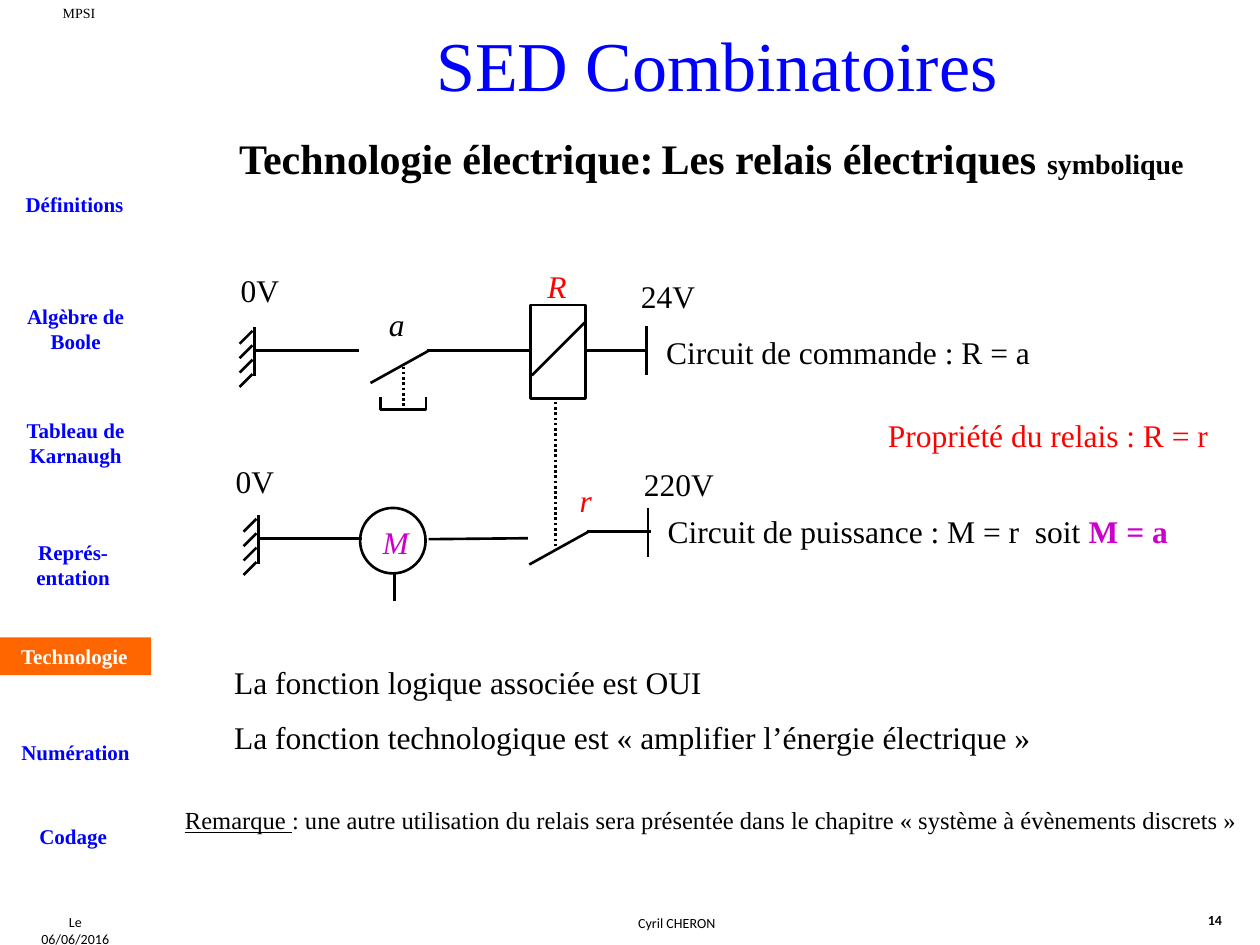
from lxml import etree
from pptx import Presentation
from pptx.dml.color import RGBColor
from pptx.enum.dml import MSO_LINE
from pptx.enum.shapes import MSO_CONNECTOR, MSO_SHAPE
from pptx.enum.text import PP_ALIGN
from pptx.oxml.ns import qn
from pptx.util import Cm, Pt

LEFT, MID = PP_ALIGN.LEFT, PP_ALIGN.CENTER
DOT = MSO_LINE.ROUND_DOT
BLACK = RGBColor(0x00, 0x00, 0x00)
WHITE = RGBColor(0xFF, 0xFF, 0xFF)
BLUE = RGBColor(0x00, 0x00, 0xFF)
RED = RGBColor(0xFF, 0x00, 0x00)
ORANGE = RGBColor(0xFF, 0x66, 0x00)
PURPLE = RGBColor(0xCC, 0x00, 0xCC)
SERIF, SANS = "Times New Roman", "Calibri"
WIDE, TIGHT, NONE = (0.25, 0.13), (0.1, 0.13), (0, 0)

# All places are in cm: left, top, width, height
FOOT = [
    ("Le 06/06/2016", (0.43, 18.29, 2.18, 0.61), False),
    ("Cyril CHERON", (3.18, 18.31, 20.93, 0.61), False),
    ("14", (24, 18.24, 0.99, 0.61), True),
]
MENU = [
    ("Définitions", 0.03, 3.73, 0.76),
    ("Algèbre de Boole", 0.05, 5.99, 1.27),
    ("Tableau de Karnaugh", 0.05, 8.28, 1.27),
    ("Représ-entation", 0, 10.74, 1.27),
    ("Numération", 0.05, 14.78, 0.76),
    ("Codage", 0, 16.48, 0.76),
]
HEAD = [
    ("Technologie électrique:", {}),
    (" ", {"size": Pt(18), "bold": False}),
    ("Les relais électriques ", {}),
    ("symbolique", {"size": Pt(16)}),
]
POWER = [
    ("Circuit de puissance : M = r  soit ", {}),
    ("M = a", {"bold": True, "color": PURPLE}),
]
NOTE = [
    ("Remarque ", {"underline": True}),
    (": une autre utilisation du relais sera présentée dans le chapitre "
     "« système à évènements discrets »", {}),
]
ROLES = [
    "La fonction logique associée est OUI",
    "La fonction technologique est « amplifier l’énergie électrique »",
]
VOLTS = [
    ("0V", (4.6, 5.33, 1.73, 0.97)),
    ("24V", (12.67, 5.46, 1.98, 0.97)),
    ("0V", (4.5, 9.19, 1.73, 0.97)),
    ("220V", (12.73, 9.25, 2.29, 0.97)),
]
SIGNS = [
    ("a", (7.44, 6.15, 1.12, 0.86), BLACK),
    ("R", (10.67, 5.38, 1.12, 0.86), RED),
    ("r", (11.25, 9.7, 1.12, 0.86), RED),
    ("M", (7.47, 10.54, 1.02, 0.69), PURPLE),
]
FACTS = [
    ("Circuit de commande : R = a", (13.18, 6.58, 7.85, 1.02), BLACK),
    (POWER, (13.21, 10.19, 10.59, 1.02), BLACK),
    ("Propriété du relais : R = r", (17.65, 8.26, 6.96, 1.02), RED),
]
COIL = (10.69, 6.15, 1.12, 1.88)
MOTOR = (7.26, 10.24, 1.32, 1.32)
BUTTON = [(7.67, 8), (7.67, 8.26), (8.59, 8.26), (8.59, 8)]
GROUNDS = [(5.13, 6.6), (5.21, 10.39)]
SWITCHES = [(8.66, 7.06), (11.86, 10.72)]
BARS = [(13.03, 6.58), (13.06, 10.24)]
WIRES = [
    (5.16, 7.06, 7.24, 7.06),
    (8.61, 7.06, 10.72, 7.06),
    (11.84, 7.06, 13, 7.06),
    (10.72, 7.57, 11.79, 6.5),
    (5.21, 10.85, 7.29, 10.85),
    (8.64, 10.87, 10.64, 10.85),
    (11.84, 10.72, 13.13, 10.72),
    (7.95, 11.58, 7.95, 12.12),
]
LINKS = [(8.13, 7.39, 8.13, 8.28), (11.2, 8.1, 11.2, 11.05)]
BAR = 0.98

deck = Presentation()
deck.slide_width, deck.slide_height = Cm(25.4), Cm(19.05)
slide = deck.slides.add_slide(deck.slide_layouts[6])
shapes = slide.shapes


def write(shape, paras, size, color=BLACK, align=LEFT, bold=False,
          italic=False, face=SERIF, inset=WIDE, gap=0, wrap=True):
    """Fill a shape; each paragraph is a string or a list of (text, style)."""
    frame = shape.text_frame
    frame.word_wrap = wrap
    frame.margin_left = frame.margin_right = Cm(inset[0])
    frame.margin_top = frame.margin_bottom = Cm(inset[1])
    for i, para in enumerate(paras):
        p = frame.add_paragraph() if i else frame.paragraphs[0]
        p.alignment = align
        if i and gap:
            p.space_before = Pt(gap)
        p.font.size, p.font.name = Pt(size), face
        p.font.bold, p.font.italic = bold, italic
        p.font.color.rgb = color
        for text, style in [(para, {})] if isinstance(para, str) else para:
            run = p.add_run()
            run.text = text
            for key, value in style.items():
                if key == "color":
                    run.font.color.rgb = value
                else:
                    setattr(run.font, key, value)


def label(para, place, size, **style):
    box = shapes.add_textbox(*map(Cm, place))
    write(box, [para], size, **style)


def ink(item):
    item.line.color.rgb = BLACK
    item.line.width = Pt(1.5)


def wire(x1, y1, x2, y2, dash=None):
    line = shapes.add_connector(MSO_CONNECTOR.STRAIGHT,
                                *map(Cm, (x1, y1, x2, y2)))
    ink(line)
    if dash:
        line.line.dash_style = dash
    etree.SubElement(line._element.spPr, qn("a:effectLst"))


def solid(kind, place, fill=None):
    shape = shapes.add_shape(kind, *map(Cm, place))
    shape.shadow.inherit = False
    if fill is None:
        shape.fill.background()
    else:
        shape.fill.solid()
        shape.fill.fore_color.rgb = fill
    return shape


# Frame of the page
for text, place, bold in FOOT:
    label(text, place, 8, face=SANS, bold=bold, align=MID, wrap=False)
label("MPSI", (0.81, 0.1, 1.57, 0.33), 8, align=MID, inset=NONE)
for text, x, y, h in MENU:
    label(text, (x, y, 2.95, h), 12, color=BLUE, bold=True, align=MID,
          inset=TIGHT)
tab = solid(MSO_SHAPE.RECTANGLE, (-0.05, 12.85, 3.1, 0.76), ORANGE)
tab.line.fill.background()
write(tab, ["Technologie"], 12, color=WHITE, bold=True, align=MID)
label("SED Combinatoires", (6.17, 0.3, 16.56, 1.96), 40, color=BLUE, align=MID)
label(HEAD, (3.53, 2.54, 21.62, 1.27), 24, bold=True, align=MID)

# Both circuits
for x, y in GROUNDS:
    wire(x, y, x, y + BAR)
    for i in range(4):
        top = y + 0.07 + 0.29 * i
        wire(x - 0.04, top, x - 0.3, top + 0.26)
for x, y in SWITCHES:
    wire(x, y, x - 1.19, y + 0.66)
for x, y in BARS:
    wire(x, y, x, y + BAR)
ink(solid(MSO_SHAPE.RECTANGLE, COIL))
ink(solid(MSO_SHAPE.OVAL, MOTOR, WHITE))
for ends in WIRES:
    wire(*ends)
for ends in LINKS:
    wire(*ends, dash=DOT)
path = [(Cm(x), Cm(y)) for x, y in BUTTON]
pen = shapes.build_freeform(*path[0])
pen.add_line_segments(path[1:], close=False)
push = pen.convert_to_shape()
push.shadow.inherit = False
push.fill.background()
ink(push)
for text, place in VOLTS:
    label(text, place, 18)
for text, place, color in SIGNS:
    label(text, place, 18, color=color, italic=True, align=MID, inset=NONE)

# What the circuits mean
for para, place, color in FACTS:
    label(para, place, 18, color=color, wrap=False)
roles = shapes.add_textbox(Cm(4.47), Cm(13.23), Cm(17.78), Cm(2.16))
write(roles, ROLES, 18, gap=10)
label(NOTE, (3.28, 16.1, 22.12, 0.84), 14, align=MID)

deck.save("out.pptx")
